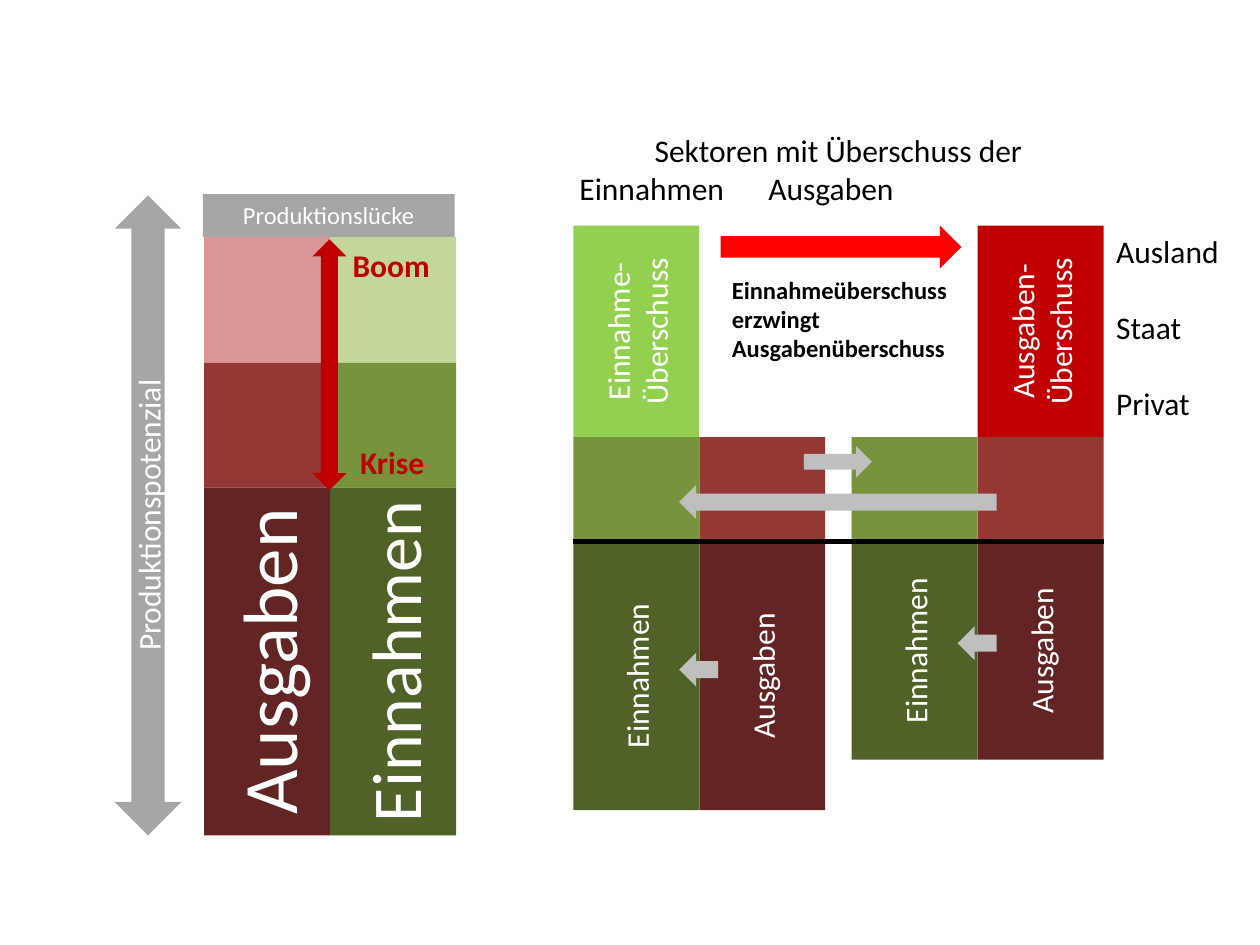
from dataclasses import dataclass

from lxml import etree
from pptx import Presentation
from pptx import util as u
from pptx.dml.color import RGBColor
from pptx.enum import shapes, text
from pptx.oxml import ns

FONT = "Calibri"
BLACK = RGBColor(0x00, 0x00, 0x00)
WHITE = RGBColor(0xFF, 0xFF, 0xFF)
GRAY = RGBColor(0xA6, 0xA6, 0xA6)
LIGHT_GRAY = RGBColor(0xBF, 0xBF, 0xBF)
RED = RGBColor(0xFF, 0x00, 0x00)
CRIMSON = RGBColor(0xC0, 0x00, 0x00)
DARK_RED = RGBColor(0x63, 0x25, 0x23)
MID_RED = RGBColor(0x95, 0x37, 0x35)
PALE_RED = RGBColor(0xD9, 0x96, 0x94)
DARK_GREEN = RGBColor(0x4F, 0x62, 0x28)
MID_GREEN = RGBColor(0x77, 0x93, 0x3C)
PALE_GREEN = RGBColor(0xC3, 0xD6, 0x9B)
BRIGHT_GREEN = RGBColor(0x92, 0xD0, 0x50)

SHAPE = shapes.MSO_SHAPE
LEFT = text.PP_ALIGN.LEFT
CENTER = text.PP_ALIGN.CENTER
COLUMN_WIDTH = 1
INCOME_LEFT, BASE_LINE, SPENDING_RIGHT = 4.55, 4.3, 8.76


@dataclass
class Block:
    left: float
    top: float
    width: float
    height: float
    color: RGBColor
    label: str = ""
    size: int = 18
    kind: SHAPE = SHAPE.RECTANGLE


@dataclass
class Tier:
    height: float
    color: RGBColor
    label: str = ""
    size: int = 18


@dataclass
class Column:
    left: float
    top: float
    tiers: list[Tier]


@dataclass
class Note:
    left: float
    top: float
    width: float
    height: float
    lines: list[str]
    size: int = 18
    color: RGBColor = BLACK
    bold: bool = False
    wrap: bool = False
    gap: float = 0


def style_paragraph(paragraph, size: int, color: RGBColor, bold: bool = False) -> None:
    paragraph.font.name = FONT
    paragraph.font.size = u.Pt(size)
    paragraph.font.bold = bold
    paragraph.font.color.rgb = color


def draw_block(slide, block: Block) -> None:
    shape = slide.shapes.add_shape(
        block.kind, *map(u.Inches, (block.left, block.top, block.width, block.height))
    )
    shape.shadow.inherit = False
    shape.fill.solid()
    shape.fill.fore_color.rgb = block.color
    shape.line.fill.background()
    if block.label:
        frame = shape.text_frame
        frame.vertical_anchor = text.MSO_ANCHOR.MIDDLE
        frame._txBody.bodyPr.set("vert", "vert270")
        paragraph = frame.paragraphs[0]
        paragraph.text = block.label
        paragraph.alignment = CENTER
        style_paragraph(paragraph, block.size, WHITE)


def draw_column(slide, column: Column) -> None:
    top = column.top
    for tier in column.tiers:
        draw_block(slide, Block(column.left, top, COLUMN_WIDTH, tier.height,
                                tier.color, tier.label, tier.size))
        top += tier.height


def draw_note(slide, note: Note):
    box = slide.shapes.add_textbox(
        *map(u.Inches, (note.left, note.top, note.width, note.height))
    )
    frame = box.text_frame
    frame.word_wrap = note.wrap
    frame.auto_size = text.MSO_AUTO_SIZE.SHAPE_TO_FIT_TEXT
    for index, line in enumerate(note.lines):
        paragraph = frame.add_paragraph() if index else frame.paragraphs[0]
        paragraph.text = line
        paragraph.alignment = LEFT
        if index and note.gap:
            paragraph.space_before = u.Pt(note.gap)
        style_paragraph(paragraph, note.size, note.color, note.bold)
    return box


def draw_heading(slide) -> None:
    note = Note(4.45, 0.99, 4.41, 0.71,
                ["Sektoren mit Überschuss der", "Einnahmen\tAusgaben"], wrap=True)
    title, sides = draw_note(slide, note).text_frame.paragraphs
    title.alignment = CENTER
    properties = sides._p.get_or_add_pPr()
    properties.set("marL", str(u.Inches(0.05)))
    properties.set("indent", "0")
    tabs = etree.Element(ns.qn("a:tabLst"))
    etree.SubElement(tabs, ns.qn("a:tab"), pos=str(u.Inches(3.17)), algn="l")
    properties.find(ns.qn("a:defRPr")).addprevious(tabs)


def draw_base_line(slide) -> None:
    line = slide.shapes.add_connector(
        shapes.MSO_CONNECTOR.STRAIGHT,
        *map(u.Inches, (INCOME_LEFT, BASE_LINE, SPENDING_RIGHT, BASE_LINE)),
    )
    line.line.color.rgb = BLACK
    line.line.width = u.Pt(3)
    etree.SubElement(line._element.spPr, ns.qn("a:effectLst"))


COLUMNS = [
    Column(1.62, 1.88, [Tier(1, PALE_RED), Tier(0.99, MID_RED),
                        Tier(2.76, DARK_RED, "Ausgaben", 44)]),
    Column(2.62, 1.88, [Tier(1, PALE_GREEN), Tier(0.99, MID_GREEN),
                        Tier(2.76, DARK_GREEN, "Einnahmen", 40)]),
    Column(7.76, 1.79, [Tier(1.68, CRIMSON, "Ausgaben- Überschuss"),
                        Tier(0.83, MID_RED), Tier(1.73, DARK_RED, "Ausgaben")]),
    Column(6.76, 3.47, [Tier(0.83, MID_GREEN), Tier(1.73, DARK_GREEN, "Einnahmen")]),
    Column(5.55, 3.47, [Tier(0.83, MID_RED), Tier(2.13, DARK_RED, "Ausgaben")]),
    Column(INCOME_LEFT, 1.79, [Tier(1.68, BRIGHT_GREEN, "Einnahme- Überschuss"),
                               Tier(0.83, MID_GREEN),
                               Tier(2.13, DARK_GREEN, "Einnahmen")]),
]

OUTPUT_GAP = Block(1.61, 1.54, 2, 0.34, GRAY)

ARROWS = [
    Block(2.48, 1.9, 0.27, 1.99, CRIMSON, kind=SHAPE.UP_DOWN_ARROW),
    Block(0.91, 1.55, 0.53, 5.08, GRAY, "Produktionspotenzial", kind=SHAPE.UP_DOWN_ARROW),
    Block(7.6, 4.97, 0.31, 0.27, LIGHT_GRAY, kind=SHAPE.LEFT_ARROW),
    Block(6.38, 3.54, 0.54, 0.25, LIGHT_GRAY, kind=SHAPE.RIGHT_ARROW),
    Block(5.39, 5.18, 0.31, 0.27, LIGHT_GRAY, kind=SHAPE.LEFT_ARROW),
    Block(5.39, 3.85, 2.52, 0.27, LIGHT_GRAY, kind=SHAPE.LEFT_ARROW),
    Block(5.72, 1.79, 1.91, 0.34, RED, kind=SHAPE.RIGHT_ARROW),
]

NOTES = [
    Note(1.83, 1.54, 1.58, 0.34, ["Produktionslücke"], 14, WHITE),
    Note(2.76, 3.47, 0.71, 0.4, ["Krise"], color=CRIMSON, bold=True),
    Note(2.7, 1.9, 0.82, 0.4, ["Boom"], color=CRIMSON, bold=True),
    Note(8.76, 1.79, 1.02, 1.62, ["Ausland", "Staat", "Privat"], gap=22),
    Note(5.71, 2.13, 1.92, 0.81,
         ["Einnahmeüberschuss", "erzwingt", "Ausgabenüberschuss"],
         14, bold=True, wrap=True),
]


def main() -> None:
    presentation = Presentation()
    presentation.slide_width = u.Inches(10)
    presentation.slide_height = u.Inches(7.5)
    slide = presentation.slides.add_slide(presentation.slide_layouts[6])
    for column in COLUMNS:
        draw_column(slide, column)
    draw_block(slide, OUTPUT_GAP)
    draw_base_line(slide)
    for arrow in ARROWS:
        draw_block(slide, arrow)
    draw_heading(slide)
    for note in NOTES:
        draw_note(slide, note)
    presentation.save("out.pptx")


if __name__ == "__main__":
    main()
